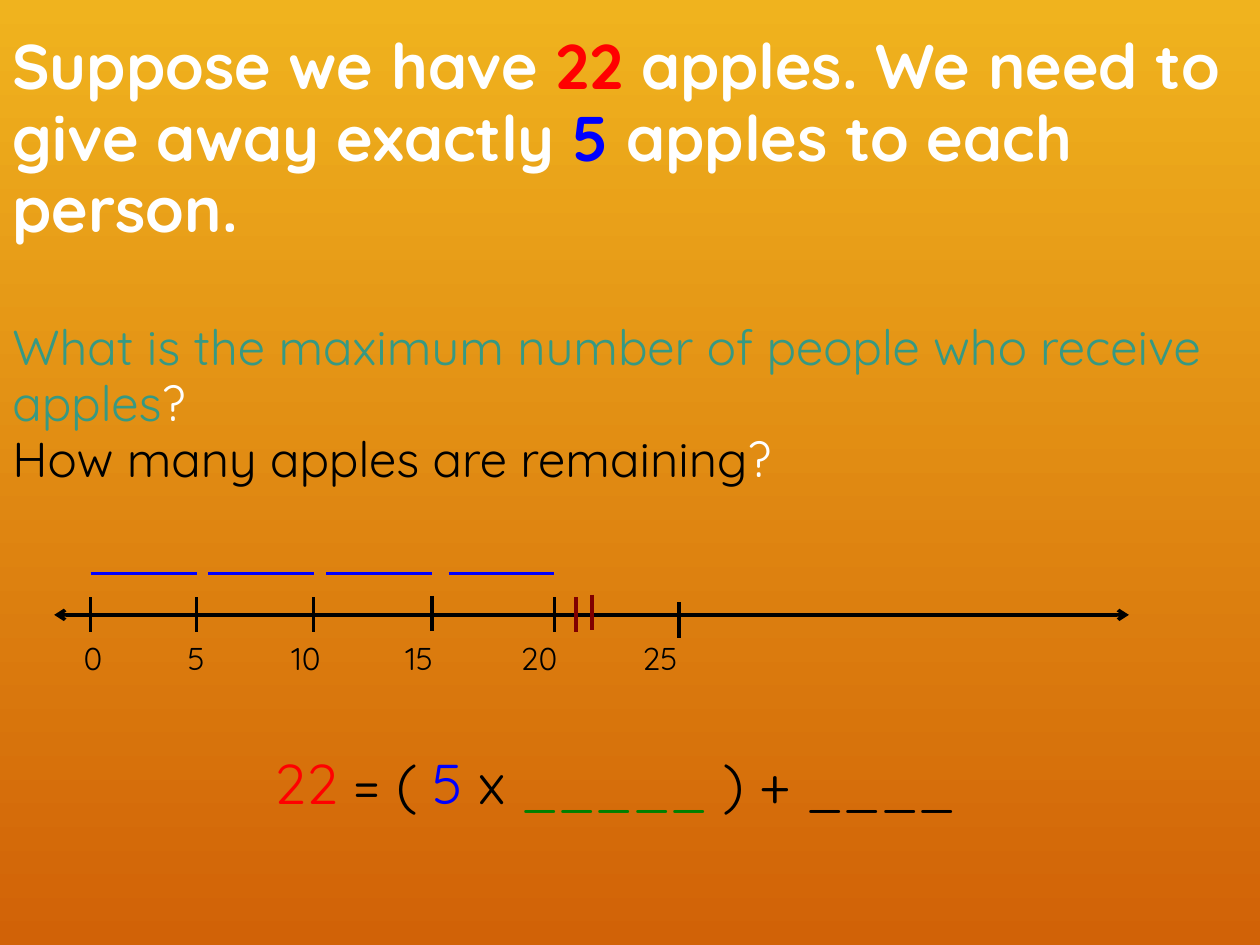
import pptx
import pptx.dml.color
import pptx.enum.shapes
import pptx.enum.text
import pptx.oxml
import pptx.oxml.ns
import pptx.util

Inches = pptx.util.Inches
Pt = pptx.util.Pt
Align = pptx.enum.text.PP_ALIGN
Anchor = pptx.enum.text.MSO_ANCHOR

WHITE, BLACK, RED, BLUE = "FFFFFF", "000000", "FF0000", "0000FF"
GREEN, TEAL, MAROON = "008000", "369983", "800000"


def color(code):
    return pptx.dml.color.RGBColor.from_string(code)


def node(parent, tag, **attrs):
    child = pptx.oxml.parse_xml(f"<a:{tag} {pptx.oxml.ns.nsdecls('a')}/>")
    for key, value in attrs.items():
        child.set(key, str(value))
    parent.append(child)
    return child


def span(text, size=32, ink=BLACK, bold=False):
    return text, size, ink, bold


class Board:
    font = "Quicksand"
    weight = 2

    def __init__(self, deck):
        self.slide = deck.slides.add_slide(deck.slide_layouts[6])

    def ground(self, top, bottom):
        fill = self.slide.background.fill
        fill.gradient()
        fill.gradient_angle = 270
        for stop, code, place in zip(fill.gradient_stops, (top, bottom), (0, 1)):
            stop.color.rgb = color(code)
            stop.position = place

    def text(self, box, paras, align=Align.LEFT, anchor=Anchor.TOP,
             lead=None, gaps=(), tabs=()):
        shape = self.slide.shapes.add_textbox(*map(Inches, box))
        frame = shape.text_frame
        frame.word_wrap = True
        frame.vertical_anchor = anchor
        for i, spans in enumerate(paras):
            para = frame.add_paragraph() if i else frame.paragraphs[0]
            if tabs:
                stops = node(para._p.get_or_add_pPr(), "tabLst")
                for tab in tabs:
                    node(stops, "tab", pos=Inches(tab), algn="ctr")
            para.alignment = align
            if lead:
                para.line_spacing = lead
            if gaps and gaps[i]:
                para.space_before = Pt(gaps[i])
            for words, size, ink, bold in spans:
                run = para.add_run()
                run.text = words
                run.font.name = self.font
                run.font.size = Pt(size)
                run.font.bold = bold
                run.font.color.rgb = color(ink)

    def line(self, x1, y1, x2, y2, ink=BLACK, arrows=False):
        kind = pptx.enum.shapes.MSO_CONNECTOR.STRAIGHT
        link = self.slide.shapes.add_connector(kind, *map(Inches, (x1, y1, x2, y2)))
        link.line.color.rgb = color(ink)
        link.line.width = Pt(self.weight)
        if arrows:
            for end in ("headEnd", "tailEnd"):
                node(link.line._ln, end, type="arrow")
        node(link._element.spPr, "effectLst")

    def tick(self, x, top=4.74, ink=BLACK):
        self.line(x, top, x, top + 0.28, ink)


def main():
    deck = pptx.Presentation()
    deck.slide_width, deck.slide_height = Inches(10), Inches(7.5)
    board = Board(deck)
    board.ground("F0B31E", "D16207")

    board.text((0, 0.1, 10, 3.93), [
        [span("Suppose we have ", 36, WHITE, True),
         span("22 ", 36, RED, True),
         span("apples. We need to give away exactly ", 36, WHITE, True),
         span("5 ", 36, BLUE, True),
         span("apples to each person.", 36, WHITE, True)],
        [span("What is the maximum number of people who receive apples", 28, TEAL),
         span("?", 28, WHITE)],
        [span("How many apples are remaining", 28), span("?", 28, WHITE)],
    ], anchor=Anchor.MIDDLE, lead=0.95, gaps=(0, 42, 0))

    board.line(0.43, 4.88, 8.96, 4.88, arrows=True)
    marks = (0.72, 1.56, 2.49, 3.43, 4.4, 5.39)
    tops = (4.74, 4.74, 4.74, 4.73, 4.74, 4.78)
    for x, top in zip(marks, tops):
        board.tick(x, top)
    board.tick(4.57, ink=MAROON)
    board.tick(4.7, 4.72, MAROON)
    for end in marks[1:5]:
        board.line(end - 0.84, 4.55, end, 4.55, BLUE)

    labels = "".join(f"\t{n}" for n in range(0, 30, 5))
    board.text((0.43, 5.02, 6.56, 0.4), [[span(labels, 18)]],
               tabs=(0.21, 1.03, 1.9, 2.8, 3.75, 4.71))

    board.text((1.22, 5.89, 7.33, 0.64), [
        [span("22 ", ink=RED), span("= ( "), span("5 ", ink=BLUE), span("x "),
         span("_____", ink=GREEN), span(" ) + ____")],
    ], align=Align.CENTER)

    deck.save("out.pptx")


if __name__ == "__main__":
    main()
